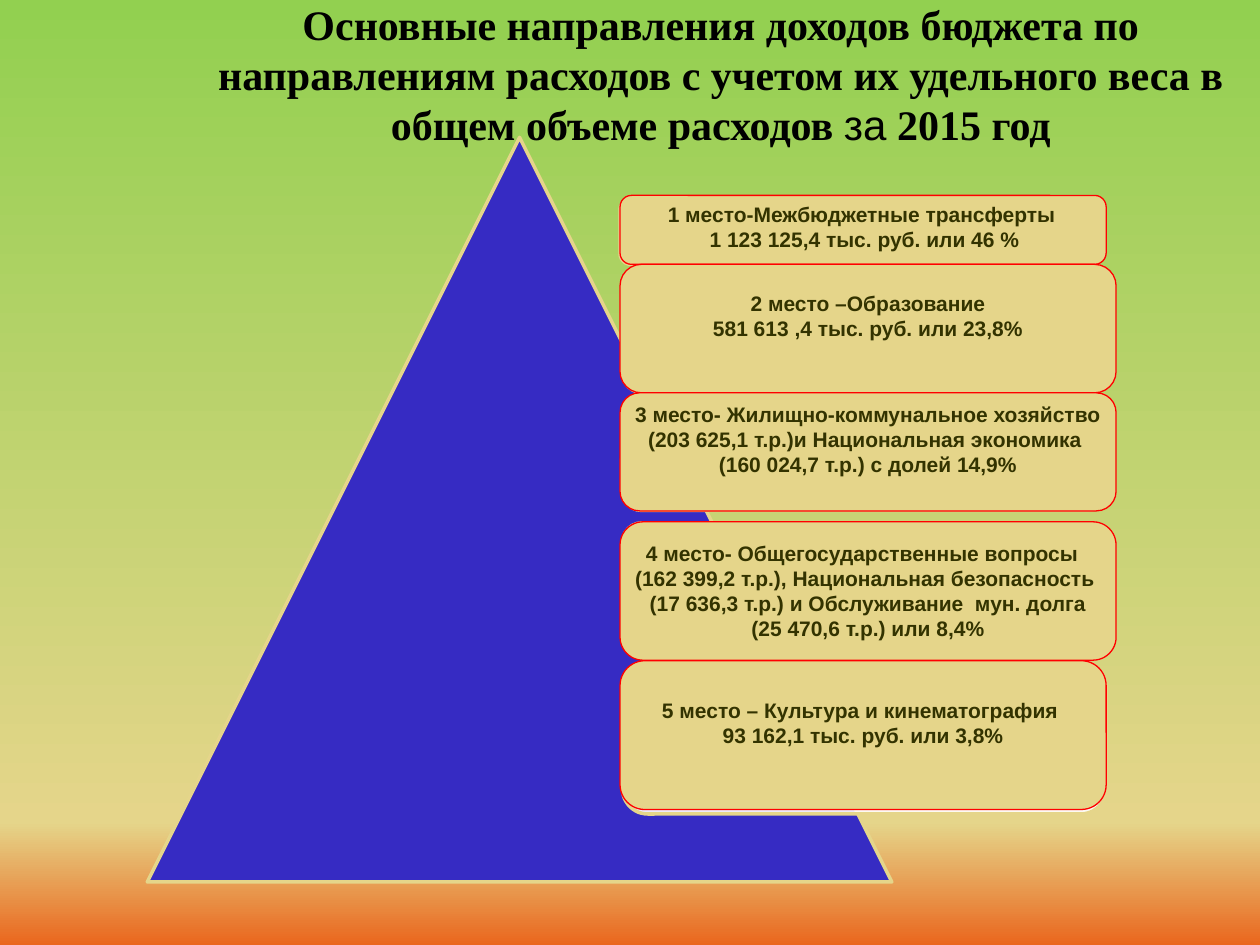
"""Build a slide that ranks the main budget spending lines beside a pyramid."""
from copy import deepcopy

from lxml.etree import SubElement
from pptx import Presentation
from pptx.dml.color import RGBColor
from pptx.enum.shapes import MSO_SHAPE as Shape
from pptx.enum.text import MSO_ANCHOR as Anchor, PP_ALIGN as Align
from pptx.oxml.ns import qn
from pptx.util import Cm, Pt

SAND, RED, BLUE, WHITE, OLIVE, BLACK = "E5D58A", "FF0000", "362BC3", "FFFFFF", "333300", "000000"
BACKGROUND = [(0, "92D050"), (0.87, SAND), (1, "EA671E")]
SERIF, SANS = "Times New Roman", "Arial"
TITLE = [[
    ("Основные направления доходов бюджета по направлениям расходов "
     "с учетом их удельного веса в общем объеме расходов ", SERIF, True),
    ("за", SANS, False),
    (" 2015 год", SERIF, True),
]]
TITLE_PLACE = (4.09, 0.91, 20.88, 2.9)
PYRAMID = (2.97, 2.77, 15.01, 15.01)
CARD_LEFT, PANEL_WIDTH = 12.5, 9.75
PANELS = [(12.5, 4.01, 1.32), (12.55, 5.46, 2.46), (12.55, 8, 2.29),
          (12.55, 10.54, 2.36), (12.55, 13.36, 3.05)]
FIRST_LINES = ["1 место-Межбюджетные трансферты ", "1 123 125,4 тыс. руб. или 46 %"]
FIRST_PLACE = (CARD_LEFT, 3.94, 9.86, 1.27)
CARDS = [
    (3.94, 9.8, 1.39, 0, []),
    (5.33, 10, 2.59, 1, ["2 место –Образование", "581 613 ,4 тыс. руб. или 23,8%"]),
    (7.92, 10, 2.38, 1, ["3 место- Жилищно-коммунальное хозяйство",
                         "(203 625,1 т.р.)и Национальная экономика ",
                         "(160 024,7 т.р.) с долей 14,9%"]),
    (10.52, 10, 2.79, 0, ["4 место- Общегосударственные вопросы  ",
                          "(162 399,2 т.р.), Национальная безопасность ",
                          "(17 636,3 т.р.) и Обслуживание  мун. долга",
                          "(25 470,6 т.р.) или 8,4%"]),
    (13.32, 9.8, 3, 1, ["5 место – Культура и кинематография ",
                        "93 162,1 тыс. руб. или 3,8%"]),
]
LINE_FACTOR = 1.19


def color(value):
    return RGBColor.from_string(value)


def lengths(place):
    return [Cm(value) for value in place]


def paint_background(page):
    fill = page.background.fill
    fill.gradient()
    fill.gradient_angle = 270
    first = fill._fill._gradFill.gsLst[0]
    first.addnext(deepcopy(first))
    for stop, (position, value) in zip(fill.gradient_stops, BACKGROUND):
        stop.position = position
        stop.color.rgb = color(value)


def add_block(shapes, kind, place, fill, line, weight, opacity=None):
    block = shapes.add_shape(kind, *lengths(place))
    block.shadow.inherit = False
    block.fill.solid()
    block.fill.fore_color.rgb = color(fill)
    block.line.color.rgb = color(line)
    block.line.width = Pt(weight)
    if opacity is not None:
        tint = block.fill._xPr.find(qn("a:solidFill"))[0]
        SubElement(tint, qn("a:alpha"), val=str(opacity * 1000))
    return block


def write(frame, paragraphs, size, value):
    for index, spans in enumerate(paragraphs):
        para = frame.paragraphs[0] if index == 0 else frame.add_paragraph()
        para.alignment = Align.CENTER
        para.line_spacing = Pt(size * LINE_FACTOR)
        for text, face, bold in spans:
            span = para.add_run()
            span.text = text
            span.font.name = face
            span.font.size = Pt(size)
            span.font.bold = bold
            span.font.color.rgb = color(value)


def card_text(lines):
    return [[(line, SANS, True)] for line in lines]


def main():
    deck = Presentation()
    deck.slide_width, deck.slide_height = Cm(25.4), Cm(19.05)
    page = deck.slides.add_slide(deck.slide_layouts[6])
    paint_background(page)

    title = page.shapes.add_textbox(*lengths(TITLE_PLACE)).text_frame
    title.word_wrap = True
    title.vertical_anchor = Anchor.BOTTOM
    title.margin_bottom = Cm(0.8)
    write(title, TITLE, 24, BLACK)

    pyramid = page.shapes.add_group_shape().shapes
    add_block(pyramid, Shape.ISOSCELES_TRIANGLE, PYRAMID, BLUE, SAND, 2)
    for left, top, height in PANELS:
        add_block(pyramid, Shape.ROUNDED_RECTANGLE, (left, top, PANEL_WIDTH, height),
                  WHITE, SAND, 2, opacity=90)

    for top, width, height, lift, lines in CARDS:
        card = add_block(page.shapes, Shape.ROUNDED_RECTANGLE,
                         (CARD_LEFT, top, width, height), SAND, RED, 0.75)
        frame = card.text_frame
        frame.word_wrap = False
        frame.vertical_anchor = Anchor.MIDDLE
        frame.margin_bottom = Cm(0.13 + 0.5 * lift)
        write(frame, card_text(lines), 12, OLIVE)

    first = page.shapes.add_textbox(*lengths(FIRST_PLACE)).text_frame
    first.word_wrap = True
    write(first, card_text(FIRST_LINES), 12, OLIVE)

    deck.save("out.pptx")


if __name__ == "__main__":
    main()
